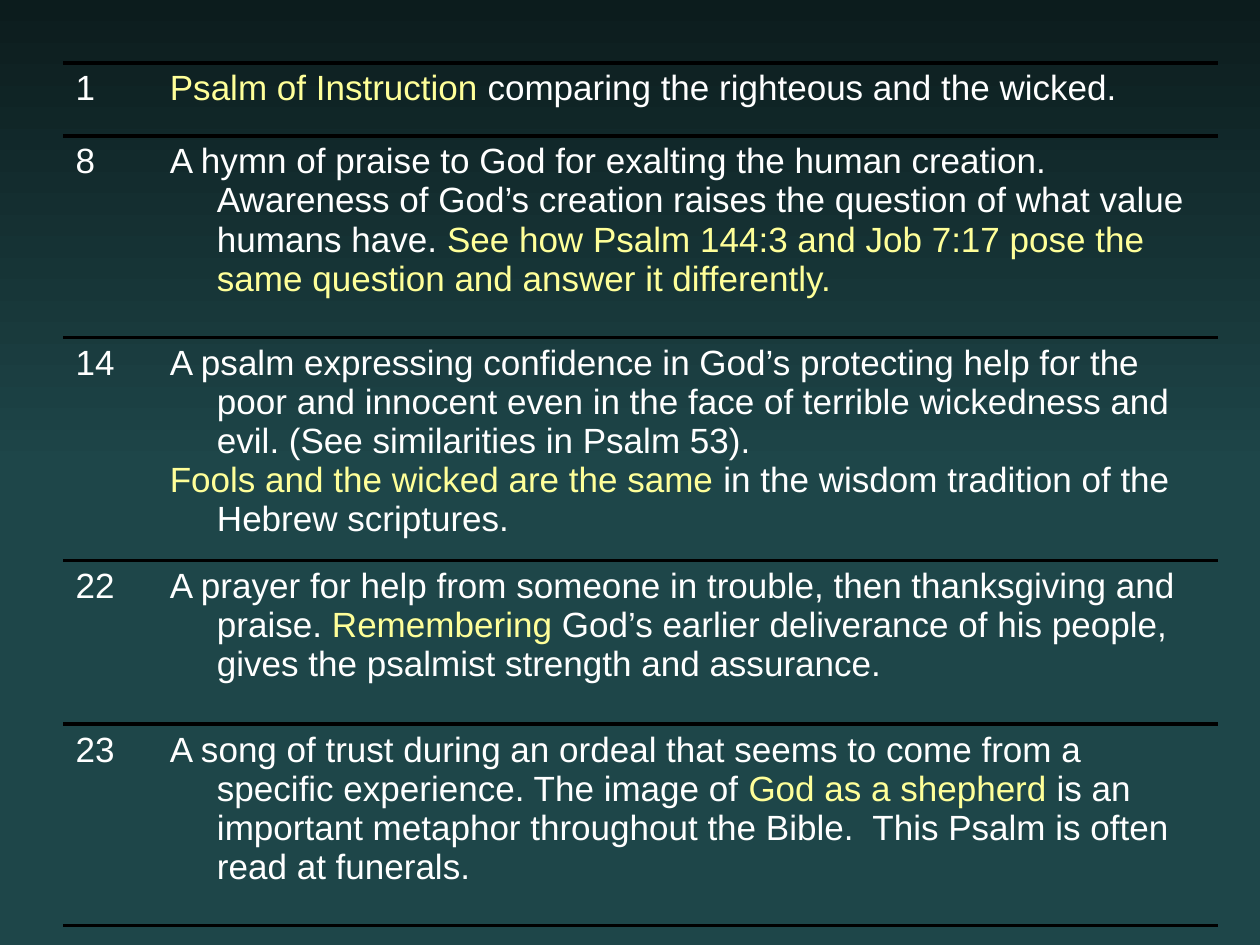
from copy import deepcopy
from dataclasses import dataclass

from lxml import etree
from pptx import Presentation
from pptx import util as u
from pptx.dml.color import RGBColor as Rgb
from pptx.oxml import ns


@dataclass(frozen=True)
class Theme:
    font: str = "Arial"
    size: int = 20
    plain: str = "FFFFFF"
    accent: str = "FFFF99"
    rule: str = "000000"
    weight: float = 2.25
    dark: str = "0C1C1D"
    teal: str = "1E4649"


# Words between asterisks take the accent colour; each string is a paragraph.
PSALMS = [
    ("1", 1.47, ["*Psalm of Instruction *comparing the righteous and the wicked."]),
    ("8", 4.06, [
        "A hymn of praise to God for exalting the human creation. Awareness of "
        "God’s creation raises the question of what value humans have. "
        "*See how Psalm 144:3 and Job 7:17 pose the same question and answer "
        "it differently.*"]),
    ("14", 4.5, [
        "A psalm expressing confidence in God’s protecting help for the poor and "
        "innocent even in the face of terrible wickedness and evil. "
        "(See similarities in Psalm 53).",
        "*Fools and the wicked are the same *in the wisdom tradition of the "
        "Hebrew scriptures."]),
    ("22", 3.3, [
        "A prayer for help from someone in trouble, then thanksgiving and praise. "
        "*Remembering *God’s earlier deliverance of his people, gives the "
        "psalmist strength and assurance."]),
    ("23", 4.06, [
        "A song of trust during an ordeal that seems to come from a specific "
        "experience. The image of *God as a shepherd *is an important metaphor "
        "throughout the Bible.  This Psalm is often read at funerals."]),
]


def write(para, words, *, font, size, plain, accent, hang):
    """Fill a paragraph with a hanging indent and marked accent words."""
    props = para._p.get_or_add_pPr()
    props.set("marL", str(hang))
    props.set("indent", str(-hang))
    for i, part in enumerate(words.split("*")):
        if part:
            run = para.add_run()
            run.text = part
            run.font.name = font
            run.font.size = u.Pt(size)
            run.font.color.rgb = Rgb.from_string(accent if i % 2 else plain)


class Deck:
    def __init__(self, theme):
        self.theme = theme
        self.prs = Presentation()
        self.prs.slide_width, self.prs.slide_height = u.Cm(25.4), u.Cm(19.05)
        self.slide = self.prs.slides.add_slide(self.prs.slide_layouts[6])

    def back(self):
        """Fade the background from dark at the top to teal from the middle."""
        fill = self.slide.background.fill
        fill.gradient()
        fill.gradient_angle = 270
        looks = [(0, self.theme.dark), (0.5, self.theme.teal)]
        for stop, (place, color) in zip(fill.gradient_stops, looks):
            stop.position = place
            stop.color.rgb = Rgb.from_string(color)
        stops = self.slide._element.find(".//" + ns.qn("a:gsLst"))
        last = deepcopy(stops[-1])
        last.set("pos", "100000")
        stops.append(last)

    def rule(self, cell):
        """Draw lines above and below a cell, none at its sides."""
        props = cell._tc.get_or_add_tcPr()
        for i, side in enumerate("LRTB"):
            line = etree.Element(ns.qn("a:ln" + side))
            if side in "TB":
                line.set("w", str(u.Pt(self.theme.weight)))
                fill = etree.SubElement(line, ns.qn("a:solidFill"))
                etree.SubElement(fill, ns.qn("a:srgbClr"), val=self.theme.rule)
            else:
                etree.SubElement(line, ns.qn("a:noFill"))
            props.insert(i, line)

    def cell(self, cell, paras):
        look = self.theme
        cell.fill.background()
        self.rule(cell)
        frame = cell.text_frame
        for i, words in enumerate(paras):
            para = frame.add_paragraph() if i else frame.paragraphs[0]
            write(para, words, font=look.font, size=look.size, plain=look.plain,
                  accent=look.accent, hang=u.Cm(0.95))

    def table(self, rows, left, top, widths):
        high = sum(row[1] for row in rows)
        grid = self.slide.shapes.add_table(
            len(rows), len(widths), u.Cm(left), u.Cm(top),
            u.Cm(sum(widths)), u.Cm(high)).table
        grid.first_row = grid.horz_banding = False
        for col, width in zip(grid.columns, widths):
            col.width = u.Cm(width)
        for row, (number, height, paras) in zip(grid.rows, rows):
            row.height = u.Cm(height)
            self.cell(row.cells[0], [number])
            self.cell(row.cells[1], paras)


def main():
    deck = Deck(Theme())
    deck.back()
    deck.table(PSALMS, 1.27, 1.27, [1.9, 21.39])
    deck.prs.save("out.pptx")


if __name__ == "__main__":
    main()
